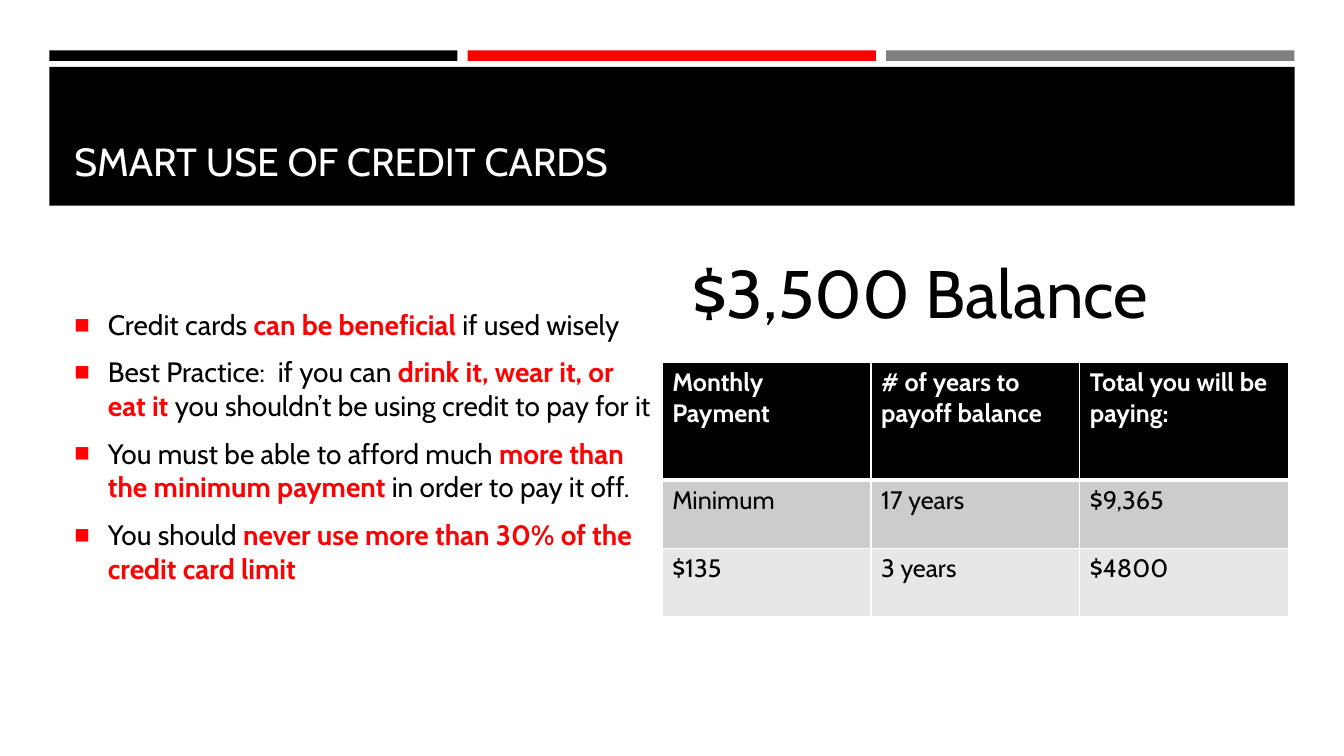
from dataclasses import dataclass

from lxml.etree import SubElement
from pptx import Presentation
from pptx.dml.color import RGBColor
from pptx.enum.shapes import MSO_SHAPE
from pptx.enum.text import MSO_ANCHOR
from pptx.oxml import parse_xml
from pptx.oxml.ns import nsdecls, qn
from pptx.util import Pt


@dataclass(frozen=True)
class Theme:
    font: str = "Cabin"
    black: str = "000000"
    white: str = "FFFFFF"
    red: str = "FF0000"
    grey: str = "7F7F7F"
    bands: tuple = ("CCCCCC", "E7E7E7")
    title: int = 28
    body: int = 20
    table: int = 18
    balance: int = 48


class SlideBuilder:
    def __init__(self, slide, theme):
        self.slide = slide
        self.theme = theme

    def bar(self, left, top, width, height, color):
        bar = self.slide.shapes.add_shape(
            MSO_SHAPE.RECTANGLE, Pt(left), Pt(top), Pt(width), Pt(height))
        bar.shadow.inherit = False
        bar.fill.solid()
        bar.fill.fore_color.rgb = RGBColor.from_string(color)
        bar.line.fill.background()

    def run(self, paragraph, text, size, color, bold=False):
        run = paragraph.add_run()
        run.text = text
        run.font.name = self.theme.font
        run.font.size = Pt(size)
        run.font.bold = bold
        run.font.color.rgb = RGBColor.from_string(color)

    def frame(self, left, top, width, height, anchor):
        frame = self.slide.shapes.add_textbox(
            Pt(left), Pt(top), Pt(width), Pt(height)).text_frame
        frame.word_wrap = True
        frame.vertical_anchor = anchor
        return frame

    def line(self, left, top, width, height, text, size, color, anchor=MSO_ANCHOR.TOP):
        frame = self.frame(left, top, width, height, anchor)
        self.run(frame.paragraphs[0], text, size, color)

    def bullets(self, left, top, width, height, items):
        """Each item is a list of (text, emphasised) pairs."""
        theme = self.theme
        frame = self.frame(left, top, width, height, MSO_ANCHOR.MIDDLE)
        for index, parts in enumerate(items):
            paragraph = frame.add_paragraph() if index else frame.paragraphs[0]
            self.square_bullet(paragraph)
            paragraph.space_after = Pt(6)
            if index:
                paragraph.space_before = Pt(4)
            for text, emphasised in parts:
                color = theme.red if emphasised else theme.black
                self.run(paragraph, text, theme.body, color, emphasised)

    def square_bullet(self, paragraph, indent=24):
        props = paragraph._p.get_or_add_pPr()
        props.set("marL", str(Pt(indent)))
        props.set("indent", str(-Pt(indent)))
        color = SubElement(props, qn("a:buClr"))
        SubElement(color, qn("a:srgbClr"), val=self.theme.red)
        SubElement(props, qn("a:buSzPct"), val="92000")
        SubElement(props, qn("a:buFont"), typeface="Arial")
        SubElement(props, qn("a:buChar"), char="■")

    def table(self, left, top, column_width, row_heights, rows):
        theme = self.theme
        columns = len(rows[0])
        table = self.slide.shapes.add_table(
            len(rows), columns, Pt(left), Pt(top),
            Pt(column_width * columns), Pt(sum(row_heights))).table
        for column in table.columns:
            column.width = Pt(column_width)
        fills = (theme.black, *theme.bands)
        for r, (height, fill, texts) in enumerate(zip(row_heights, fills, rows)):
            table.rows[r].height = Pt(height)
            header = r == 0
            for c, text in enumerate(texts):
                cell = table.cell(r, c)
                cell.fill.solid()
                cell.fill.fore_color.rgb = RGBColor.from_string(fill)
                self.borders(cell, top=3 if r == 1 else 1, bottom=3 if header else 1)
                color = theme.white if header else theme.black
                self.run(cell.text_frame.paragraphs[0], text, theme.table, color, header)

    def borders(self, cell, top, bottom):
        props = cell._tc.get_or_add_tcPr()
        sides = (("lnL", 1), ("lnR", 1), ("lnT", top), ("lnB", bottom))
        for position, (side, width) in enumerate(sides):
            props.insert(position, parse_xml(
                f'<a:{side} {nsdecls("a")} w="{Pt(width)}"><a:solidFill>'
                f'<a:srgbClr val="{self.theme.white}"/></a:solidFill></a:{side}>'))


def main():
    theme = Theme()
    deck = Presentation()
    deck.slide_width, deck.slide_height = Pt(960), Pt(540)
    builder = SlideBuilder(deck.slides.add_slide(deck.slide_layouts[6]), theme)

    # Three accent bars above the title band
    for index, color in enumerate((theme.black, theme.red, theme.grey)):
        builder.bar(35.2 + 298.9 * index, 36, 291.6, 7.5, color)

    # Title band
    builder.bar(35.2, 47.8, 889.6, 99.2, theme.black)
    builder.line(46, 57.6, 868, 77.8, "SMART USE OF CREDIT CARDS",
                 theme.title, theme.white, MSO_ANCHOR.BOTTOM)

    # Advice
    builder.bullets(46, 175.7, 427, 285.8, [
        [("Credit cards ", False), ("can be beneficial ", True),
         ("if used wisely", False)],
        [("Best Practice:  if you can ", False),
         ("drink it, wear it, or eat it ", True),
         ("you shouldn’t be using credit to pay for it", False)],
        [("You must be able to afford much ", False),
         ("more than the minimum payment", True),
         (" in order to pay it off.", False)],
        [("You should ", False),
         ("never use more than 30% of the credit card limit", True)],
    ])

    # Payoff comparison
    builder.table(473, 258.8, 149.2, (84, 48.8, 48.8), [
        ("Monthly Payment", "# of years to payoff balance", "Total you will be paying:"),
        ("Minimum", "17 years", "$9,365"),
        ("$135", "3 years", "$4800"),
    ])
    builder.line(487.5, 175.7, 427, 65.5, "$3,500 Balance", theme.balance, theme.black)

    deck.save("out.pptx")


if __name__ == "__main__":
    main()
